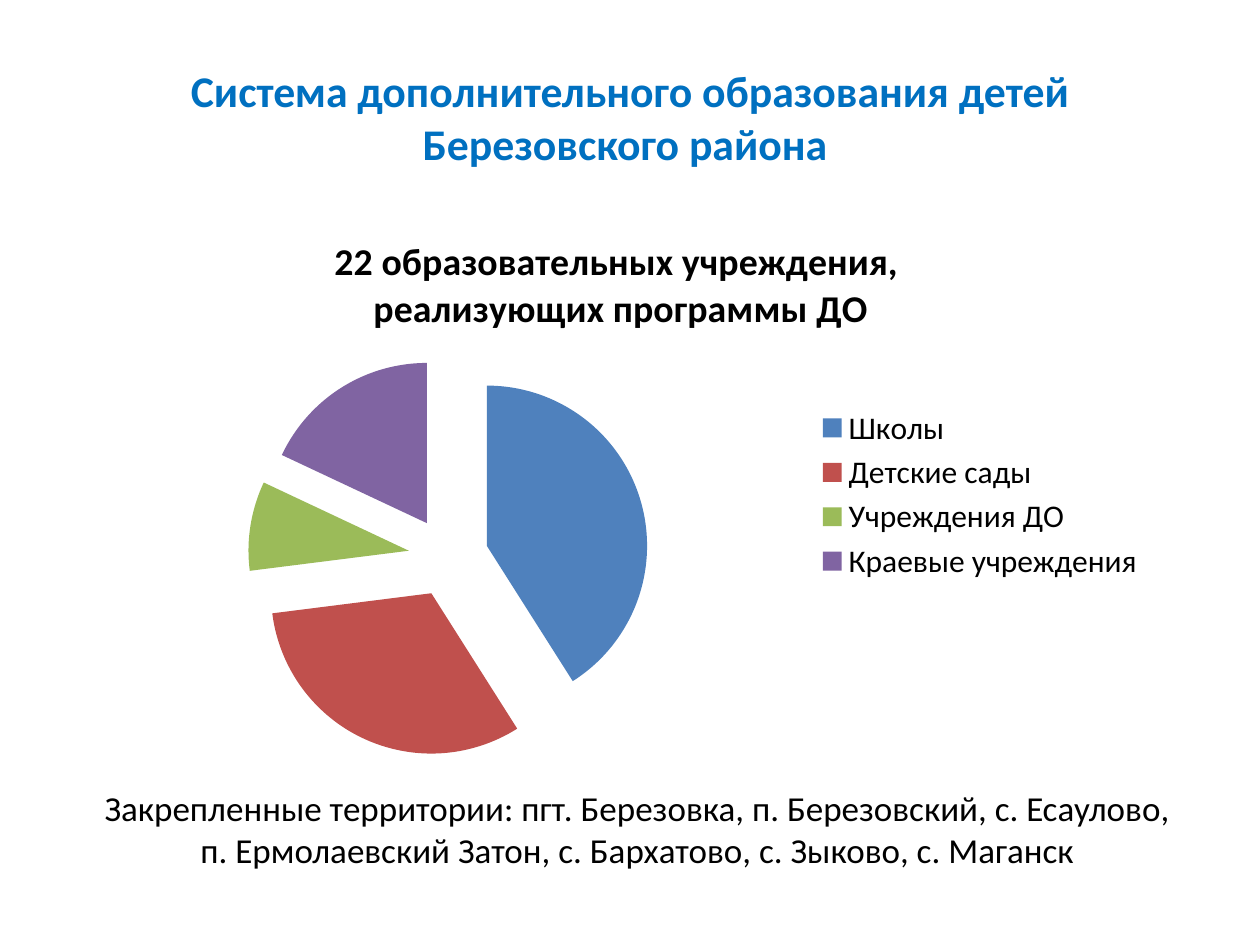
from lxml.etree import Element
from pptx import Presentation
from pptx.chart.data import CategoryChartData
from pptx.dml.color import RGBColor
from pptx.enum.chart import XL_CHART_TYPE, XL_LEGEND_POSITION
from pptx.enum.text import MSO_ANCHOR, PP_ALIGN
from pptx.oxml.ns import qn
from pptx.util import Cm, Pt

BLACK = RGBColor(0x00, 0x00, 0x00)
TITLE_BLUE = RGBColor(0x00, 0x70, 0xC0)
FONT = "Calibri"

# Category, share in percent, slice colour
SLICES = [
    ("Школы", 41, RGBColor(0x4F, 0x81, 0xBD)),
    ("Детские сады", 32, RGBColor(0xC0, 0x50, 0x4D)),
    ("Учреждения ДО", 9, RGBColor(0x9B, 0xBB, 0x59)),
    ("Краевые учреждения", 18, RGBColor(0x80, 0x64, 0xA2)),
]


def set_font(font, size, color=BLACK, bold=False):
    font.name = FONT
    font.size = Pt(size)
    font.bold = bold
    font.color.rgb = color


def add_text(s, left, top, width, height, lines, size, color=BLACK, bold=False):
    tf = s.shapes.add_textbox(left, top, width, height).text_frame
    tf.word_wrap = True
    tf.vertical_anchor = MSO_ANCHOR.MIDDLE
    tf.text = lines
    for p in tf.paragraphs:
        p.alignment = PP_ALIGN.CENTER
        set_font(p.font, size, color, bold)


def add_pie(s, left, top, width, height, title):
    data = CategoryChartData()
    data.categories = [name for name, _, _ in SLICES]
    data.add_series("Доля учреждений", [share for _, share, _ in SLICES])
    chart = s.shapes.add_chart(
        XL_CHART_TYPE.PIE, left, top, width, height, data).chart
    set_font(chart.font, 18)

    # Title and legend
    chart.has_title = True
    tf = chart.chart_title.text_frame
    tf.text = title
    for p in tf.paragraphs:
        set_font(p.font, 21.6, bold=True)
    chart.has_legend = True
    chart.legend.position = XL_LEGEND_POSITION.RIGHT
    chart.legend.include_in_layout = False

    # Slice colours, with the slices pulled apart
    plot = chart.plots[0]
    plot.vary_by_categories = True
    series = plot.series[0]
    for i, (_, _, color) in enumerate(SLICES):
        fill = series.points[i].format.fill
        fill.solid()
        fill.fore_color.rgb = color
    explosion = Element(qn("c:explosion"), val="25")
    series._element.find(qn("c:dPt")).addprevious(explosion)


def main():
    prs = Presentation()
    prs.slide_width, prs.slide_height = Cm(25.4), Cm(19.05)
    s = prs.slides.add_slide(prs.slide_layouts[6])

    # Heading
    add_text(s, Cm(1.27), Cm(0.76), Cm(22.86), Cm(3.18),
             "Система дополнительного образования детей\vБерезовского района ",
             25, TITLE_BLUE, True)

    # Institutions by kind
    add_pie(s, Cm(1.7), Cm(4.32), Cm(21.64), Cm(11.3),
            "22 образовательных учреждения, \nреализующих программы ДО")

    # Territories
    add_text(s, Cm(1.5), Cm(15.11), Cm(22.86), Cm(3.18),
             "Закрепленные территории: пгт. Березовка, п. Березовский, с. Есаулово, \n"
             "п. Ермолаевский Затон, с. Бархатово, с. Зыково, с. Маганск ", 20)

    prs.save("out.pptx")


if __name__ == "__main__":
    main()
